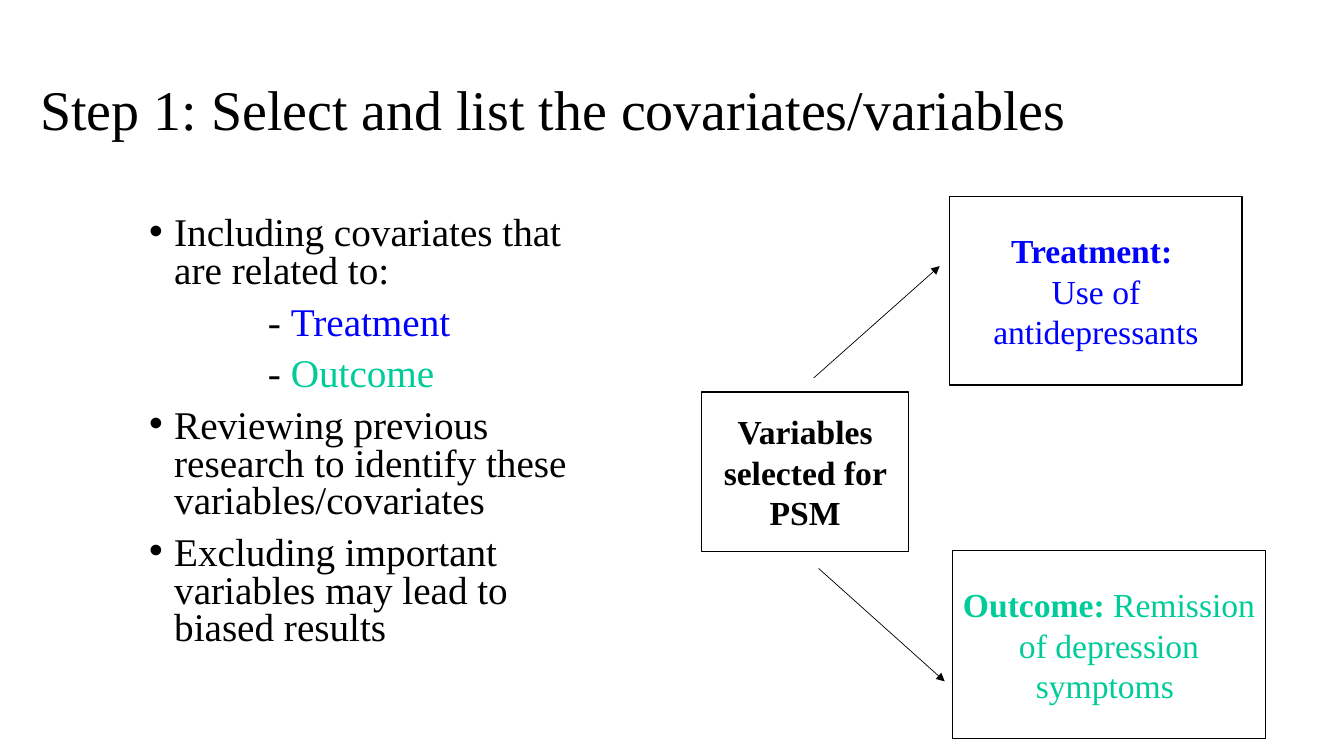
from dataclasses import dataclass

from lxml import etree
from pptx import Presentation
from pptx.dml.color import RGBColor
from pptx.enum.shapes import MSO_CONNECTOR, MSO_SHAPE
from pptx.enum.text import MSO_ANCHOR, PP_ALIGN
from pptx.oxml.ns import qn
from pptx.util import Inches, Pt

RECTANGLE = MSO_SHAPE.RECTANGLE
STRAIGHT = MSO_CONNECTOR.STRAIGHT
TOP, MIDDLE = MSO_ANCHOR.TOP, MSO_ANCHOR.MIDDLE
LEFT, CENTER = PP_ALIGN.LEFT, PP_ALIGN.CENTER


@dataclass(frozen=True)
class Theme:
    font: str = "Times New Roman"
    ink: str = "000000"
    paper: str = "FFFFFF"
    treatment: str = "0000FF"
    outcome: str = "00CC99"
    title_size: int = 40
    body_size: int = 28
    box_size: int = 24
    box_line: float = 1
    arrow_line: float = 0.5


THEME = Theme()

# Content: a paragraph is a list of (text, colour, bold) runs
TITLE = [[("Step 1: Select and list the covariates/variables", THEME.ink, False)]]
ADVICE = [  # (level, runs)
    ("bullet", [("Including covariates that are related to:", THEME.ink, False)]),
    ("dash", [("- ", THEME.ink, False), ("Treatment", THEME.treatment, False)]),
    ("dash", [("- ", THEME.ink, False), ("Outcome", THEME.outcome, False)]),
    ("bullet", [("Reviewing previous research to identify these variables/covariates",
                 THEME.ink, False)]),
    ("bullet", [("Excluding important variables may lead to biased results",
                 THEME.ink, False)]),
]
BOXES = [  # (left, top, width, height), paragraphs
    ((6.96, 3.89, 2.05, 1.58), [[("Variables selected for PSM", THEME.ink, True)]]),
    ((9.42, 1.95, 2.9, 1.87), [[("Treatment: ", THEME.treatment, True)],
                               [("Use of antidepressants", THEME.treatment, False)]]),
    ((9.45, 5.46, 3.1, 1.87), [[("Outcome: ", THEME.outcome, True),
                                ("Remission of depression symptoms ",
                                 THEME.outcome, False)]]),
]
ARROWS = [  # start, run across and down
    ((8.07, 3.75), (1.25, -1.11)),
    ((8.12, 5.64), (1.25, 1.12)),
]

# Layout, in inches
SLIDE_SIZE = (13.33, 7.5)
TITLE_AREA = (0.3, 0.39, 12.18, 1.45)
ADVICE_AREA = (1.38, 2.1, 4.77, 4.66)
INDENTS = {"bullet": (0.25, -0.25), "dash": (1.18, 0)}


def inches(values):
    return [Inches(value) for value in values]


def write(frame, paragraphs, size, anchor, **paragraph_format):
    frame.word_wrap = True
    frame.vertical_anchor = anchor
    for index, runs in enumerate(paragraphs):
        paragraph = frame.add_paragraph() if index else frame.paragraphs[0]
        for key, value in paragraph_format.items():
            setattr(paragraph, key, value)
        for text, color, bold in runs:
            run = paragraph.add_run()
            run.text = text
            for key, value in {"name": THEME.font, "size": Pt(size), "bold": bold}.items():
                setattr(run.font, key, value)
            run.font.color.rgb = RGBColor.from_string(color)


def indent(paragraph, level):
    margin, first_line = INDENTS[level]
    properties = paragraph._p.get_or_add_pPr()
    properties.set("marL", str(Inches(margin)))
    properties.set("indent", str(Inches(first_line)))
    if level == "bullet":
        etree.SubElement(properties, qn("a:buFont"), typeface="Arial")
        etree.SubElement(properties, qn("a:buChar"), char="•")
    else:
        etree.SubElement(properties, qn("a:buNone"))


def stroke(line, width):
    line.color.rgb = RGBColor.from_string(THEME.ink)
    line.width = Pt(width)


def add_box(shapes, area, paragraphs):
    box = shapes.add_shape(RECTANGLE, *inches(area))
    box.shadow.inherit = False
    box.fill.solid()
    box.fill.fore_color.rgb = RGBColor.from_string(THEME.paper)
    stroke(box.line, THEME.box_line)
    write(box.text_frame, paragraphs, THEME.box_size, MIDDLE, alignment=CENTER)


def add_arrow(shapes, start, reach):
    end = [origin + step for origin, step in zip(start, reach)]
    arrow = shapes.add_connector(STRAIGHT, *inches([*start, *end]))
    stroke(arrow.line, THEME.arrow_line)
    etree.SubElement(arrow.line._get_or_add_ln(), qn("a:tailEnd"), type="triangle")
    etree.SubElement(arrow._element.spPr, qn("a:effectLst"))


def main():
    deck = Presentation()
    deck.slide_width, deck.slide_height = inches(SLIDE_SIZE)
    shapes = deck.slides.add_slide(deck.slide_layouts[6]).shapes

    # Title
    title = shapes.add_textbox(*inches(TITLE_AREA)).text_frame
    write(title, TITLE, THEME.title_size, MIDDLE, alignment=LEFT, line_spacing=0.9)

    # Advice list
    advice = shapes.add_textbox(*inches(ADVICE_AREA)).text_frame
    write(advice, [runs for _, runs in ADVICE], THEME.body_size, TOP,
          alignment=LEFT, line_spacing=0.8, space_before=Pt(10))
    for paragraph, (level, _) in zip(advice.paragraphs, ADVICE):
        indent(paragraph, level)

    # Diagram
    for area, paragraphs in BOXES:
        add_box(shapes, area, paragraphs)
    for start, reach in ARROWS:
        add_arrow(shapes, start, reach)

    deck.save("out.pptx")


if __name__ == "__main__":
    main()
